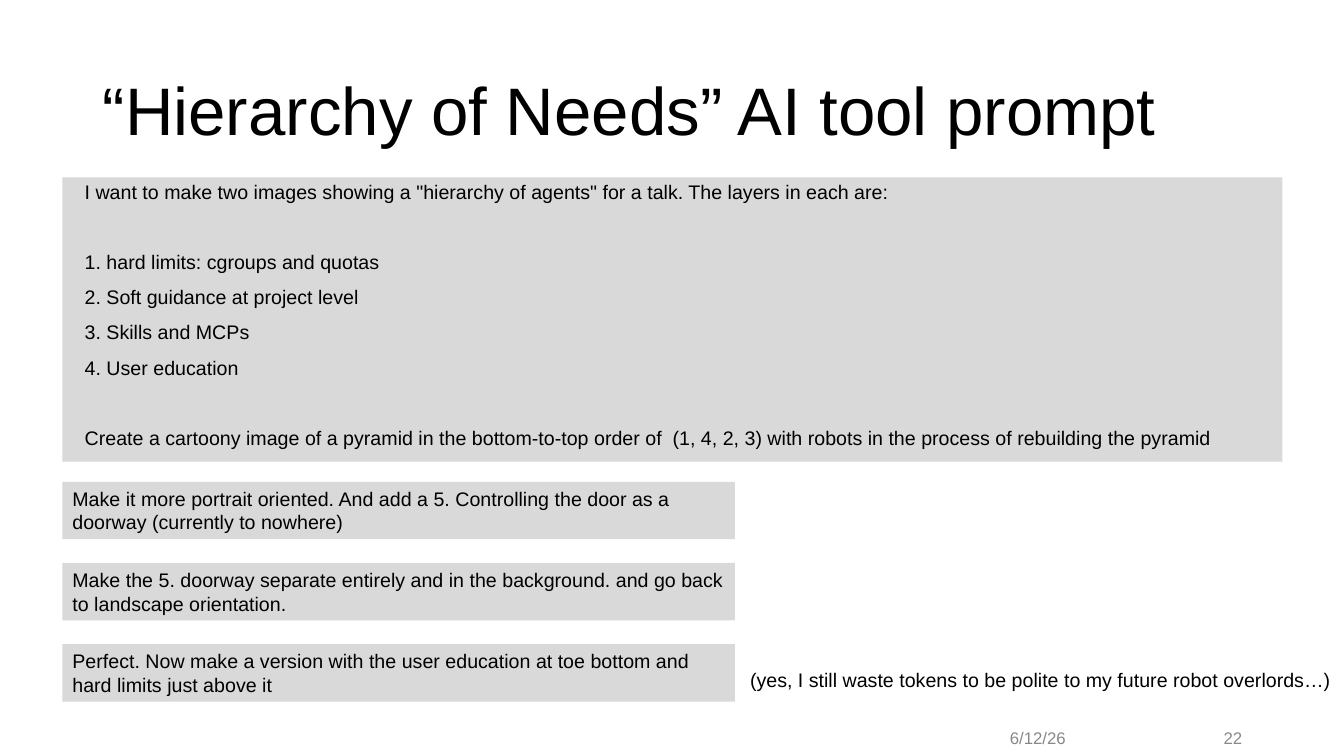
from dataclasses import dataclass
from typing import Optional

import pptx
import pptx.dml.color
import pptx.enum.shapes
import pptx.enum.text
import pptx.util

Inches = pptx.util.Inches
Pt = pptx.util.Pt
RGBColor = pptx.dml.color.RGBColor
Align = pptx.enum.text.PP_ALIGN
Anchor = pptx.enum.text.MSO_ANCHOR
AutoSize = pptx.enum.text.MSO_AUTO_SIZE

BLACK = RGBColor(0x00, 0x00, 0x00)
GRAY = RGBColor(0x88, 0x88, 0x88)
PANEL = RGBColor(0xD9, 0xD9, 0xD9)
FONT = "Arial"


@dataclass(frozen=True)
class Line:
    text: str
    space_before: float = 0


@dataclass(frozen=True)
class Box:
    left: float
    top: float
    width: float
    height: float
    lines: tuple[Line, ...]
    fill: Optional[RGBColor] = None
    size: float = 14
    color: RGBColor = BLACK
    align: Align = Align.LEFT
    anchor: Anchor = Anchor.TOP
    auto_size: AutoSize = AutoSize.SHAPE_TO_FIT_TEXT
    margin_left: float = 0.1
    line_spacing: float = 1.0
    wrap: bool = True


TITLE = Box(0.92, 0.4, 11.5, 1.45, (Line("“Hierarchy of Needs” AI tool prompt"),),
            size=48, anchor=Anchor.MIDDLE, auto_size=AutoSize.NONE, line_spacing=0.9)

FIRST_PROMPT = Box(
    0.62, 1.76, 12.1, 2.82,
    (
        Line('I want to make two images showing a "hierarchy of agents" for a talk. '
             "The layers in each are:"),
        Line("1. hard limits: cgroups and quotas", 35),
        Line("2. Soft guidance at project level", 10),
        Line("3. Skills and MCPs", 10),
        Line("4. User education", 10),
        Line("Create a cartoony image of a pyramid in the bottom-to-top order of  (1, 4, 2, 3) "
             "with robots in the process of rebuilding the pyramid", 35),
    ),
    fill=PANEL, margin_left=0.22, line_spacing=0.9,
)

FOLLOW_UPS = (
    "Make it more portrait oriented. And add a 5. Controlling the door as a doorway "
    "(currently to nowhere)",
    "Make the 5. doorway separate entirely and in the background. and go back to "
    "landscape orientation.",
    "Perfect. Now make a version with the user education at toe bottom and hard limits "
    "just above it",
)
FOLLOW_UP_TOP = 4.78
FOLLOW_UP_STEP = 0.805

ASIDE = Box(7.34, 6.58, 5.99, 0.34,
            (Line("(yes, I still waste tokens to be polite to my future robot overlords…)"),),
            wrap=False)

FOOTERS = ((9.17, "6/12/26"), (10.92, "22"))


def write_lines(shape, box: Box) -> None:
    frame = shape.text_frame
    frame.word_wrap = box.wrap
    frame.auto_size = box.auto_size
    frame.vertical_anchor = box.anchor
    frame.margin_left = Inches(box.margin_left)
    frame.margin_right = Inches(0.1)
    frame.margin_top = frame.margin_bottom = Inches(0.05)
    for index, line in enumerate(box.lines):
        paragraph = frame.paragraphs[0] if index == 0 else frame.add_paragraph()
        paragraph.alignment = box.align
        paragraph.line_spacing = box.line_spacing
        paragraph.space_before = Pt(line.space_before)
        run = paragraph.add_run()
        run.text = line.text
        run.font.name = FONT
        run.font.size = Pt(box.size)
        run.font.color.rgb = box.color


def add_box(slide, box: Box) -> None:
    """Add a filled rectangle, or a text box when there is no fill."""
    place = [Inches(value) for value in (box.left, box.top, box.width, box.height)]
    if box.fill is None:
        shape = slide.shapes.add_textbox(*place)
    else:
        shape = slide.shapes.add_shape(pptx.enum.shapes.MSO_SHAPE.RECTANGLE, *place)
        shape.shadow.inherit = False
        shape.fill.solid()
        shape.fill.fore_color.rgb = box.fill
        shape.line.fill.background()
    write_lines(shape, box)


def set_title(slide, box: Box) -> None:
    title = slide.shapes.title
    title.left, title.top = Inches(box.left), Inches(box.top)
    title.width, title.height = Inches(box.width), Inches(box.height)
    write_lines(title, box)


def main() -> None:
    presentation = pptx.Presentation()
    presentation.slide_width = Inches(13.33)
    presentation.slide_height = Inches(7.5)
    slide = presentation.slides.add_slide(presentation.slide_layouts.get_by_name("Title Only"))

    set_title(slide, TITLE)
    for left, text in FOOTERS:
        add_box(slide, Box(left, 7.07, 1.5, 0.4, (Line(text),), size=12, color=GRAY,
                           align=Align.RIGHT, anchor=Anchor.BOTTOM, auto_size=AutoSize.NONE))
    add_box(slide, FIRST_PROMPT)
    for index, text in enumerate(FOLLOW_UPS):
        top = FOLLOW_UP_TOP + index * FOLLOW_UP_STEP
        add_box(slide, Box(0.62, top, 6.67, 0.57, (Line(text),), fill=PANEL))
    add_box(slide, ASIDE)

    presentation.save("out.pptx")


if __name__ == "__main__":
    main()
